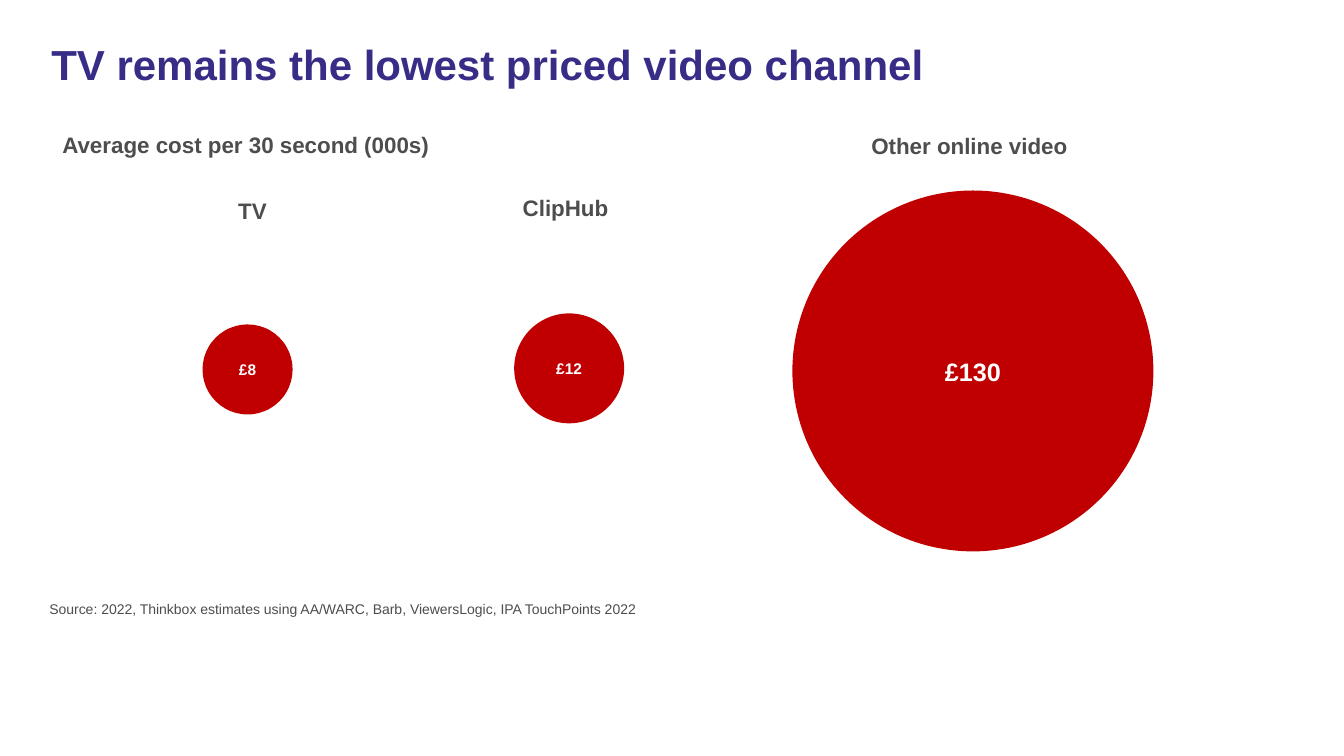
import pptx
import pptx.dml.color
import pptx.enum.shapes
import pptx.enum.text
import pptx.util

PURPLE = pptx.dml.color.RGBColor(0x37, 0x2D, 0x87)
GREY = pptx.dml.color.RGBColor(0x4D, 0x4D, 0x4D)
RED = pptx.dml.color.RGBColor(0xC0, 0x00, 0x00)
WHITE = pptx.dml.color.RGBColor(0xFF, 0xFF, 0xFF)

SLIDE_WIDTH = pptx.util.Inches(13.33)
SLIDE_HEIGHT = pptx.util.Inches(7.5)

LEFT = pptx.enum.text.PP_ALIGN.LEFT
CENTER = pptx.enum.text.PP_ALIGN.CENTER

# Channel, label (centre, top, width), bubble (centre x, centre y, diameter), price, price size
CHANNELS = [
    ("TV", (18.79, 25.47, 4.13), (18.42, 48.87, 6.7), "£8", 11),
    ("ClipHub", (42.08, 25.07, 8.93), (42.35, 48.73, 8.18), "£12", 11),
    ("Other online video", (72.13, 16.8, 17.03), (72.39, 49.07, 26.86), "£130", 18),
]
LABEL_HEIGHT = 4.93


def across(percent):
    """Length as a percentage of the slide's width."""
    return round(SLIDE_WIDTH * percent / 100)


def down(percent):
    """Length as a percentage of the slide's height."""
    return round(SLIDE_HEIGHT * percent / 100)


def write(shape, text, size, color, bold=True, alignment=LEFT):
    paragraph = shape.text_frame.paragraphs[0]
    paragraph.alignment = alignment
    run = paragraph.add_run()
    run.text = text
    run.font.name = "Arial"
    run.font.size = pptx.util.Pt(size)
    run.font.bold = bold
    run.font.color.rgb = color
    return paragraph


def add_text(slide, left, top, width, height, text, size, color,
             bold=True, alignment=LEFT, wrap=True):
    box = slide.shapes.add_textbox(across(left), down(top), across(width), down(height))
    box.text_frame.word_wrap = wrap
    return write(box, text, size, color, bold, alignment)


def add_label(slide, center, top, width, text):
    add_text(slide, center - width / 2, top, width, LABEL_HEIGHT, text, 16, GREY,
             alignment=CENTER, wrap=False)


def add_bubble(slide, center_x, center_y, diameter, price, size):
    side = across(diameter)
    bubble = slide.shapes.add_shape(
        pptx.enum.shapes.MSO_SHAPE.OVAL,
        across(center_x) - side // 2, down(center_y) - side // 2, side, side)
    bubble.shadow.inherit = False
    bubble.fill.solid()
    bubble.fill.fore_color.rgb = RED
    bubble.line.fill.background()
    bubble.text_frame.vertical_anchor = pptx.enum.text.MSO_ANCHOR.MIDDLE
    write(bubble, price, size, WHITE, alignment=CENTER)


def main():
    presentation = pptx.Presentation()
    presentation.slide_width = SLIDE_WIDTH
    presentation.slide_height = SLIDE_HEIGHT
    slide = presentation.slides.add_slide(presentation.slide_layouts[6])

    # Title and subtitle
    title = add_text(slide, 3.08, 5.2, 93.02, 14.93,
                     "TV remains the lowest priced video channel", 30, PURPLE)
    title.line_spacing = 0.9
    add_text(slide, 3.9, 16.67, 35.56, LABEL_HEIGHT,
             "Average cost per 30 second (000s)", 16, GREY)

    # Price bubbles with channel labels
    for channel, label, bubble, price, size in CHANNELS:
        add_label(slide, *label, channel)
        add_bubble(slide, *bubble, price, size)

    # Source line
    add_text(slide, 2.93, 78.8, 93.02, 4.4,
             "Source: 2022, Thinkbox estimates using AA/WARC, Barb, ViewersLogic, "
             "IPA TouchPoints 2022", 10, GREY, bold=False)

    presentation.save("out.pptx")


if __name__ == "__main__":
    main()
